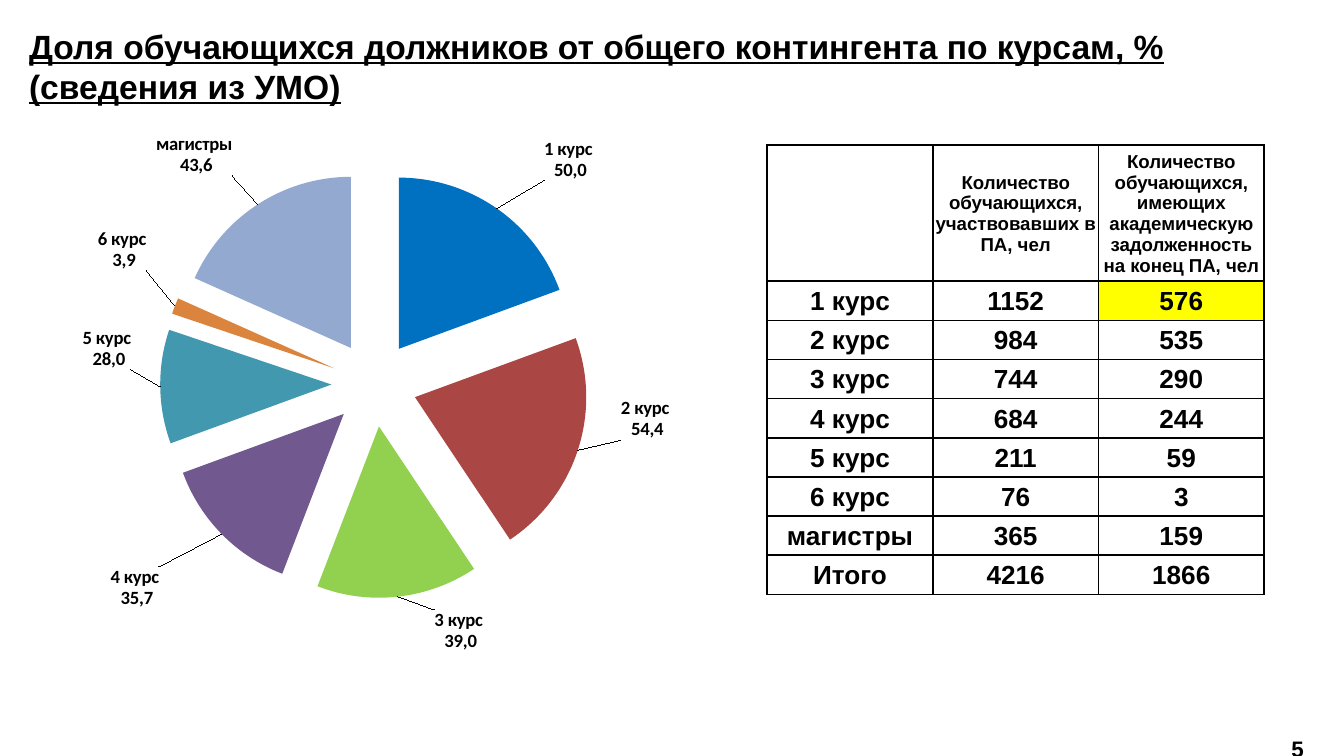
"""Build a slide with a pie chart and a table of student debt by year of study."""
from lxml import etree
from pptx import Presentation
from pptx.chart.data import CategoryChartData
from pptx.dml.color import RGBColor
from pptx.enum.chart import XL_CHART_TYPE, XL_LABEL_POSITION as POS
from pptx.enum.text import MSO_ANCHOR, PP_ALIGN
from pptx.oxml import parse_xml
from pptx.oxml.ns import nsdecls, qn
from pptx.util import Cm, Pt

BLACK = RGBColor(0x00, 0x00, 0x00)
WHITE = RGBColor(0xFF, 0xFF, 0xFF)
YELLOW = RGBColor(0xFF, 0xFF, 0x00)
BLUE = RGBColor(0x00, 0x70, 0xC0)
RED = RGBColor(0xAA, 0x46, 0x43)
GREEN = RGBColor(0x92, 0xD0, 0x50)
PURPLE = RGBColor(0x71, 0x58, 0x8F)
TEAL = RGBColor(0x41, 0x98, 0xAF)
ORANGE = RGBColor(0xDB, 0x84, 0x3D)
PALE_BLUE = RGBColor(0x93, 0xA9, 0xCF)


def style(font, size, name="Arial"):
    font.name, font.size, font.bold = name, Pt(size), True
    font.color.rgb = BLACK


def manual_layout(target="", **values):
    layout = etree.Element(qn("c:layout"))
    manual = etree.SubElement(layout, qn("c:manualLayout"))
    if target:
        etree.SubElement(manual, qn("c:layoutTarget")).set("val", target)
        for mode in ("xMode", "yMode"):
            etree.SubElement(manual, qn("c:" + mode)).set("val", "edge")
    for key, value in values.items():
        etree.SubElement(manual, qn("c:" + key)).set("val", str(value))
    return layout


prs = Presentation()
prs.slide_width, prs.slide_height = Cm(25.4), Cm(14.29)
s = prs.slides.add_slide(prs.slide_layouts[6])

title = s.shapes.add_textbox(Cm(0.3), Cm(0.36), Cm(22.6), Cm(1.8))
tf = title.text_frame
tf.word_wrap = True
tf.text = "Доля обучающихся должников от общего контингента по курсам, % (сведения из УМО)"
r = tf.paragraphs[0].runs[0]
style(r.font, 18)
r.font.underline = True

slices = [
    ("1 курс", 49.6, "50,0", BLUE, 0.06, -0.04),
    ("2 курс", 54.3, "54,4", RED, 0.05, -0.1),
    ("3 курс", 38.9, "39,0", GREEN, 0.05, 0.01),
    ("4 курс", 34.7, "35,7", PURPLE, -0.08, 0.05),
    ("5 курс", 27.5, "28,0", TEAL, -0.03, -0.07),
    ("6 курс", 3.9, "3,9", ORANGE, -0.03, -0.06),
    ("магистры", 46.8, "43,6", PALE_BLUE, -0.03, -0.04),
]
data = CategoryChartData(number_format="0.0")
data.categories = [row[0] for row in slices]
data.add_series("Series 1", [row[1] for row in slices])
chart = s.shapes.add_chart(
    XL_CHART_TYPE.PIE, Cm(0.33), Cm(2.26), Cm(13.49), Cm(10.31), data
).chart
chart.has_title = chart.has_legend = False
style(chart.font, 10, "Calibri")
plot = chart.plots[0]
plot.vary_by_categories = True
series = plot.series[0]
labels = series.data_labels
labels.show_value = labels.show_category_name = True
labels.number_format, labels.number_format_is_linked = "0.0", False
labels.position = POS.OUTSIDE_END
style(labels.font, 10, "Calibri")

for i, (name, value, shown, color, dx, dy) in enumerate(slices):
    point = series.points[i]
    point.format.fill.solid()
    point.format.fill.fore_color.rgb = color
    label = point.data_label
    label.text_frame.text = f"{name}\n {shown}"
    for p in label.text_frame.paragraphs:
        style(p.runs[0].font, 10, "Calibri")
    label.position = POS.OUTSIDE_END

chart_xml = chart.element
for element, row in zip(chart_xml.xpath(".//c:dLbl"), slices):
    for tag in element.xpath("c:showCatName"):
        tag.set("val", "1")
    element.insert(1, manual_layout(x=row[4], y=row[5]))
explosion = etree.Element(qn("c:explosion"))
explosion.set("val", "25")
chart_xml.xpath(".//c:ser/c:tx")[0].addnext(explosion)
plot_area = chart_xml.xpath(".//c:plotArea")[0]
for old in plot_area.xpath("c:layout"):
    plot_area.remove(old)
plot_area.insert(0, manual_layout("inner", x=0.2, y=0.09, w=0.6, h=0.79))

rows = [
    ("", "Количество обучающихся, участвовавших в ПА, чел",
     "Количество обучающихся, имеющих академическую задолженность на конец ПА, чел"),
    ("1 курс", "1152", "576"),
    ("2 курс", "984", "535"),
    ("3 курс", "744", "290"),
    ("4 курс", "684", "244"),
    ("5 курс", "211", "59"),
    ("6 курс", "76", "3"),
    ("магистры", "365", "159"),
    ("Итого", "4216", "1866"),
]
table = s.shapes.add_table(len(rows), 3, Cm(14.5), Cm(2.74), Cm(9.4), Cm(8.49)).table
for column in table.columns:
    column.width = Cm(3.13)
for i, row in enumerate(rows):
    table.rows[i].height = Cm(0.74 if i else 2.57)
    for j, text in enumerate(row):
        cell = table.cell(i, j)
        cell.text = text
        cell.vertical_anchor = MSO_ANCHOR.MIDDLE
        cell.margin_left = cell.margin_right = cell.margin_top = Cm(0.03)
        cell.margin_bottom = 0
        p = cell.text_frame.paragraphs[0]
        p.alignment = PP_ALIGN.CENTER
        for r in p.runs:
            style(r.font, 14 if i else 10)
        for side in "LRTB":
            cell._tc.get_or_add_tcPr().append(parse_xml(
                f'<a:ln{side} {nsdecls("a")} w="12700"><a:solidFill>'
                f'<a:srgbClr val="{BLACK}"/></a:solidFill></a:ln{side}>'))
        cell.fill.solid()
        cell.fill.fore_color.rgb = YELLOW if text == "576" else WHITE

number = s.shapes.add_textbox(Cm(23.7), Cm(13.51), Cm(1.65), Cm(0.94))
tf = number.text_frame
tf.word_wrap = True
tf.text = "5"
p = tf.paragraphs[0]
p.alignment, p.line_spacing = PP_ALIGN.CENTER, 1.5
style(p.runs[0].font, 12)

prs.save("out.pptx")
